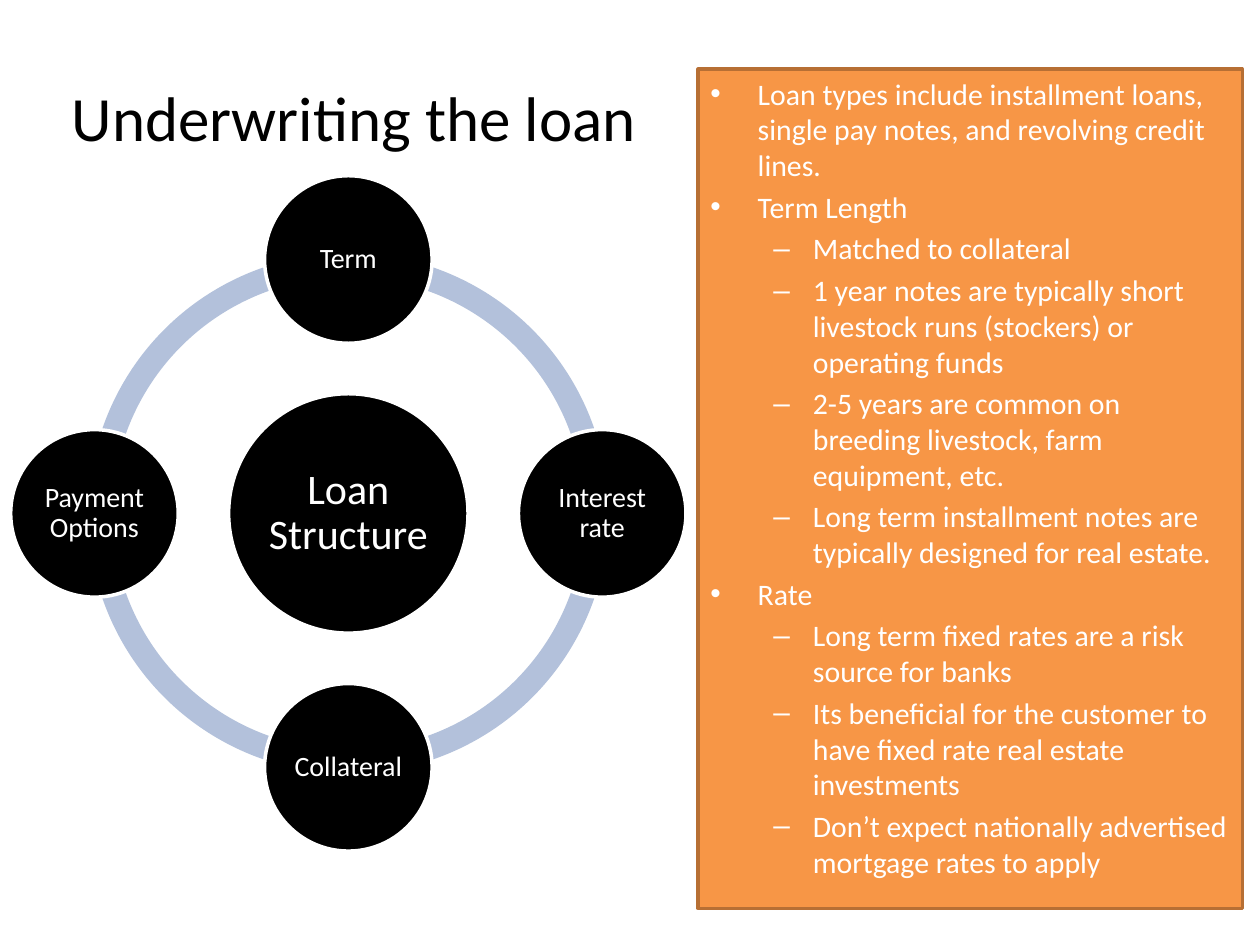
from lxml import etree
from pptx import Presentation
from pptx.dml.color import RGBColor
from pptx.enum.shapes import MSO_SHAPE
from pptx.enum.text import MSO_ANCHOR, PP_ALIGN
from pptx.oxml.ns import qn
from pptx.util import Inches, Pt

RECTANGLE, ELLIPSE, BLOCK_ARC = MSO_SHAPE.RECTANGLE, MSO_SHAPE.OVAL, MSO_SHAPE.BLOCK_ARC
TOP, MIDDLE = MSO_ANCHOR.TOP, MSO_ANCHOR.MIDDLE
LEFT, CENTER = PP_ALIGN.LEFT, PP_ALIGN.CENTER

THEME = {
    "font": "Calibri",
    "black": RGBColor.from_string("000000"),
    "white": RGBColor.from_string("FFFFFF"),
    "panel": RGBColor.from_string("F79646"),
    "panel_line": RGBColor.from_string("B76F34"),
    "ring": RGBColor.from_string("B3C1DB"),
    "title_size": 36,
    "hub_size": 24,
    "node_size": 16,
    "body_size": 17,
}

# The slide is a grid of 100 columns by 75 rows of square cells.
CELL = Inches(0.1)
HUB_X, HUB_Y = 27.65, 40.75
HUB_DIAMETER, NODE_DIAMETER, RING_DIAMETER = 19, 13.3, 41.3
ORBIT = 20.15
QUARTER_TURN = 54  # 90 degrees, in adjustment units

NODES = [
    ("Term", 0, -1),
    ("Interest rate", 1, 0),
    ("Collateral", 0, 1),
    ("Payment Options", -1, 0),
]

# Bullet, left margin and hanging indent (in cells) for each level
LEVELS = [("•", 3.75, -3.75), ("–", 8.13, -3.13)]
NOTES = [
    (0, "Loan types include installment loans, single pay notes, and revolving credit lines."),
    (0, "Term Length"),
    (1, "Matched to collateral"),
    (1, "1 year notes are typically short livestock runs (stockers) or operating funds"),
    (1, "2-5 years are common on breeding livestock, farm equipment, etc."),
    (1, "Long term installment notes are typically designed for real estate."),
    (0, "Rate"),
    (1, "Long term fixed rates are a risk source for banks"),
    (1, "Its beneficial for the customer to have fixed rate real estate investments"),
    (1, "Don’t expect nationally advertised mortgage rates to apply"),
]


def add_figure(kind, column, row, width, height, fill, line=None):
    """Add a preset shape placed in grid cells, outlined only when a line colour is given."""
    shape = slide.shapes.add_shape(
        kind, *(int(cells * CELL) for cells in (column, row, width, height)))
    shape.shadow.inherit = False
    shape.fill.solid()
    shape.fill.fore_color.rgb = fill
    if line is None:
        shape.line.fill.background()
    else:
        shape.line.color.rgb = line
        shape.line.width = Pt(2)
    return shape


def write(paragraph, text, size, color, **layout):
    paragraph.text = text
    for name, value in layout.items():
        setattr(paragraph, name, value)
    font_format = {"name": THEME["font"], "size": Pt(size)}
    for name, value in font_format.items():
        setattr(paragraph.font, name, value)
    paragraph.font.color.rgb = color


presentation = Presentation()
presentation.slide_width = 100 * CELL
presentation.slide_height = 75 * CELL
slide = presentation.slides.add_slide(presentation.slide_layouts[6])

# Title
title = slide.shapes.add_textbox(
    *(int(cells * CELL) for cells in (2.3, 3, 51.6, 12.5))).text_frame
title.word_wrap = True
title.vertical_anchor = MIDDLE
write(title.paragraphs[0], "Underwriting the loan", THEME["title_size"],
      THEME["black"], alignment=CENTER)

# Notes panel
panel = add_figure(RECTANGLE, 55.4, 5.5, 43.2, 66.6, THEME["panel"], THEME["panel_line"])
notes = panel.text_frame
notes.word_wrap = True
notes.vertical_anchor = TOP
for index, (level, text) in enumerate(NOTES):
    paragraph = notes.add_paragraph() if index else notes.paragraphs[0]
    bullet, margin, indent = LEVELS[level]
    properties = paragraph._p.get_or_add_pPr()
    properties.set("marL", str(int(margin * CELL)))
    properties.set("indent", str(int(indent * CELL)))
    etree.SubElement(properties, qn("a:buFont"), typeface="Arial")
    etree.SubElement(properties, qn("a:buChar"), char=bullet)
    write(paragraph, text, THEME["body_size"], THEME["white"], level=level,
          alignment=LEFT, space_before=Pt(0.2 * THEME["body_size"] if index else 0))

# Ring of four quarter arcs
for quarter in range(4):
    arc = add_figure(BLOCK_ARC, HUB_X - RING_DIAMETER / 2, HUB_Y - RING_DIAMETER / 2,
                     RING_DIAMETER, RING_DIAMETER, THEME["ring"])
    arc.adjustments[0] = quarter * QUARTER_TURN
    arc.adjustments[1] = (quarter + 1) % 4 * QUARTER_TURN
    arc.adjustments[2] = 0.046

# Hub and the nodes around it
circles = [("Loan Structure", 0, 0, HUB_DIAMETER, THEME["hub_size"])]
circles += [(*node, NODE_DIAMETER, THEME["node_size"]) for node in NODES]
for text, step_x, step_y, diameter, size in circles:
    circle = add_figure(ELLIPSE, HUB_X + step_x * ORBIT - diameter / 2,
                        HUB_Y + step_y * ORBIT - diameter / 2,
                        diameter, diameter, THEME["black"], THEME["white"])
    frame = circle.text_frame
    frame_format = {"word_wrap": True, "vertical_anchor": MIDDLE}
    for side in ("left", "top", "right", "bottom"):
        frame_format[f"margin_{side}"] = Inches(0.02)
    for name, value in frame_format.items():
        setattr(frame, name, value)
    write(frame.paragraphs[0], text, size, THEME["white"],
          alignment=CENTER, line_spacing=0.9)

presentation.save("out.pptx")
